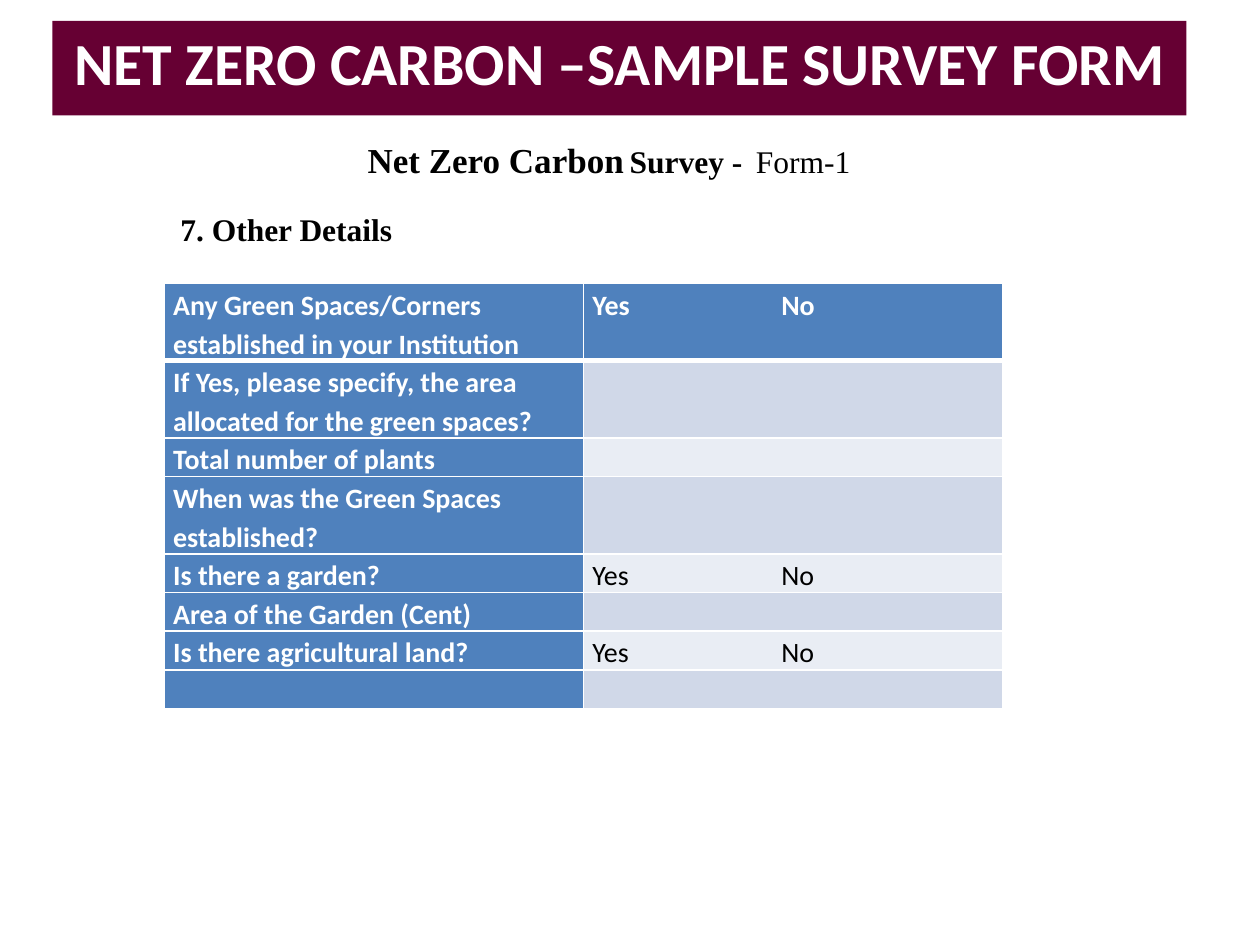
import pptx
import pptx.util
import pptx.dml.color
import pptx.enum.shapes
import pptx.enum.text
import pptx.oxml
import pptx.oxml.ns

Pt = pptx.util.Pt
Color = pptx.dml.color.RGBColor
Align = pptx.enum.text.PP_ALIGN

PLUM = Color(0x66, 0x00, 0x33)
WHITE = Color(0xFF, 0xFF, 0xFF)
BLACK = Color(0x00, 0x00, 0x00)
BLUE = Color(0x4F, 0x81, 0xBD)
BANDS = Color(0xE9, 0xED, 0xF4), Color(0xD0, 0xD8, 0xE8)
SANS = "Calibri"
SERIF = "Times New Roman"
CHOICE = "Yes\tNo"
TAB = 108
LINE = 22
ROWS = [
    ("Any Green Spaces/Corners established in your Institution", CHOICE, 2),
    ("If Yes, please specify, the area allocated for the green spaces?", "", 2),
    ("Total number of plants", "", 1),
    ("When was the Green Spaces established?", "", 2),
    ("Is there a garden?", CHOICE, 1),
    ("Area of the Garden (Cent)", "", 1),
    ("Is there agricultural land?", CHOICE, 1),
    ("", "", 1),
]


def write(para, text, size=18, font=SERIF, color=BLACK, bold=True):
    """Add one formatted run to a paragraph."""
    run = para.add_run()
    run.text = text
    run.font.size = Pt(size)
    run.font.name = font
    run.font.bold = bold
    run.font.color.rgb = color


def banner(slide, left, top, width, height):
    """Place the filled title bar."""
    bar = slide.shapes.add_shape(
        pptx.enum.shapes.MSO_SHAPE.RECTANGLE,
        Pt(left), Pt(top), Pt(width), Pt(height))
    bar.shadow.inherit = False
    bar.fill.solid()
    bar.fill.fore_color.rgb = PLUM
    bar.line.fill.background()
    frame = bar.text_frame
    frame.word_wrap = True
    frame.vertical_anchor = pptx.enum.text.MSO_ANCHOR.MIDDLE
    para = frame.paragraphs[0]
    para.alignment = Align.CENTER
    para.line_spacing = 0.8
    write(para, "NET ZERO CARBON –SAMPLE SURVEY FORM",
          size=34.1, font=SANS, color=WHITE)


def label(slide, left, top, width, height, align):
    """Place a text box and return its spaced paragraph."""
    box = slide.shapes.add_textbox(Pt(left), Pt(top), Pt(width), Pt(height))
    box.text_frame.word_wrap = True
    para = box.text_frame.paragraphs[0]
    para.alignment = align
    para.line_spacing = 1.15
    para.space_after = Pt(10)
    return para


def heading(slide, left, top, width, height):
    """Place the survey name and the section title below it."""
    name = label(slide, left + 72, top, 360, 33, Align.CENTER)
    write(name, "Net Zero Carbon", size=20)
    write(name, " ", size=14, font=SANS, bold=False)
    write(name, "Survey - ")
    write(name, " ", size=14, font=SANS)
    write(name, "Form-1", bold=False)
    part = label(slide, left, top + 41, width, height - 41, Align.LEFT)
    write(part, "7. Other Details")


def border(cell, **sides):
    """Draw white cell borders of the given widths in points."""
    space = pptx.oxml.ns.nsdecls("a")
    props = cell._tc.get_or_add_tcPr()
    for spot, (side, width) in enumerate(sides.items()):
        props.insert(spot, pptx.oxml.parse_xml(
            f'<a:ln{side} {space} w="{Pt(width)}"><a:solidFill>'
            f'<a:srgbClr val="{WHITE}"/></a:solidFill></a:ln{side}>'))


def stop(para, place):
    """Set a left tab stop at a distance in points."""
    space = pptx.oxml.ns.nsdecls("a")
    para._p.get_or_add_pPr().append(pptx.oxml.parse_xml(
        f'<a:tabLst {space}><a:tab pos="{Pt(place)}" algn="l"/></a:tabLst>'))


def fill(cell, text, row, strong):
    """Format one table cell and write its text."""
    cell.margin_left = cell.margin_right = Pt(5)
    cell.margin_top = cell.margin_bottom = Pt(0)
    cell.fill.solid()
    cell.fill.fore_color.rgb = BLUE if strong else BANDS[row % 2]
    border(cell, L=1, R=1, T=3 if row == 1 else 1, B=3 if row == 0 else 1)
    para = cell.text_frame.paragraphs[0]
    para.line_spacing = 1.15
    if "\t" in text:
        stop(para, TAB)
    write(para, text, size=16, font=SANS,
          color=WHITE if strong else BLACK, bold=strong)


def survey(slide, left, top, width):
    """Place the table of questions and answers."""
    height = LINE * sum(row[2] for row in ROWS)
    grid = slide.shapes.add_table(
        len(ROWS), 2, Pt(left), Pt(top), Pt(width), Pt(height)).table
    for column in grid.columns:
        column.width = Pt(width / 2)
    for row, (query, reply, lines) in enumerate(ROWS):
        grid.rows[row].height = Pt(LINE * lines)
        fill(grid.cell(row, 0), query, row, True)
        fill(grid.cell(row, 1), reply, row, row == 0)


def main():
    """Build the survey slide and save it."""
    deck = pptx.Presentation()
    deck.slide_width, deck.slide_height = Pt(720), Pt(540)
    slide = deck.slides.add_slide(deck.slide_layouts[6])
    banner(slide, 30, 12, 648, 54)
    heading(slide, 96, 72, 474, 104)
    survey(slide, 94, 162, 479)
    deck.save("out.pptx")


if __name__ == "__main__":
    main()
